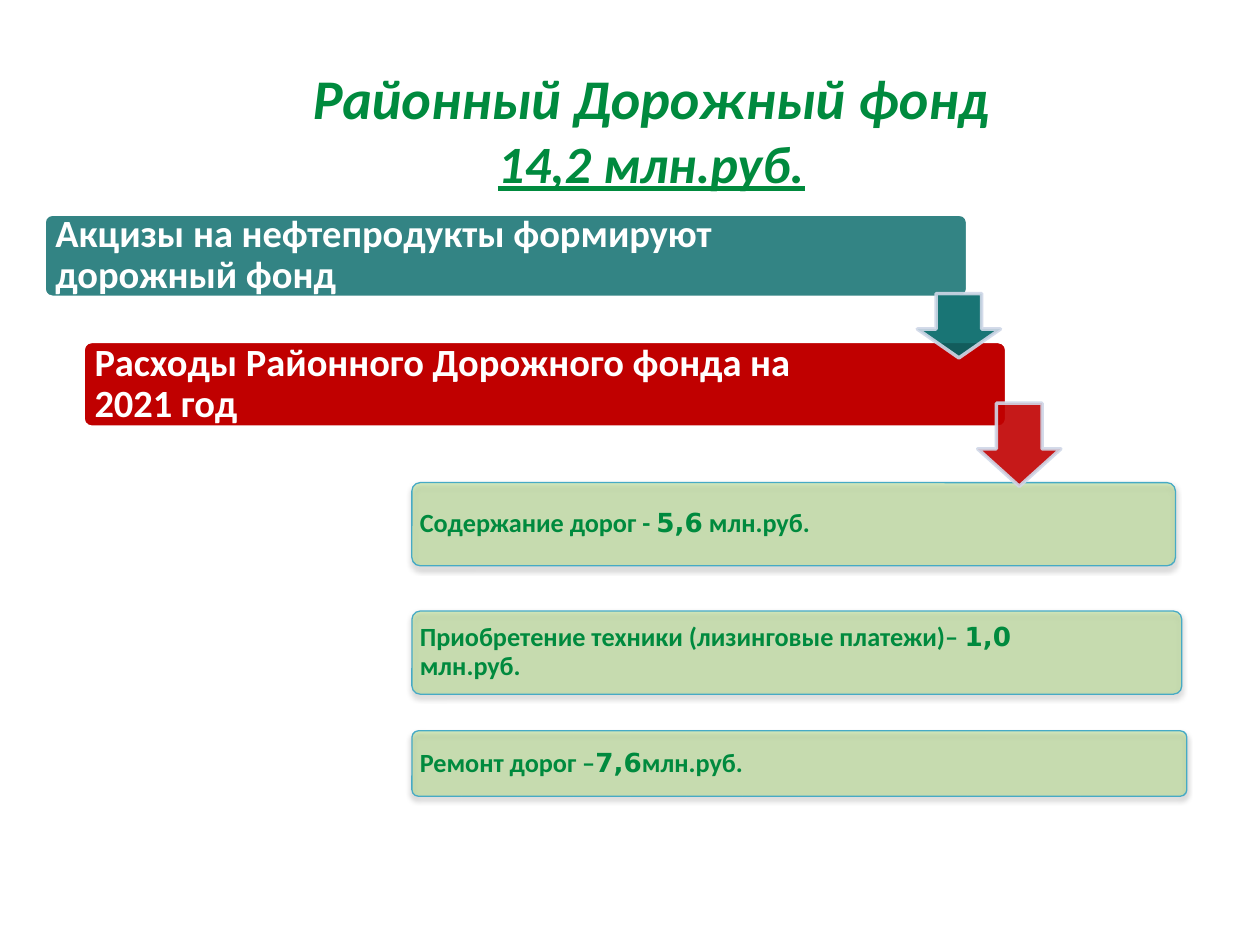
"""Build the slide on the district road fund and its spending."""
from lxml import etree
from pptx import Presentation
from pptx.dml.color import RGBColor
from pptx.enum.shapes import MSO_SHAPE
from pptx.enum.text import MSO_ANCHOR, PP_ALIGN
from pptx.oxml import parse_xml
from pptx.oxml.ns import nsdecls, qn
from pptx.util import Pt

ROUNDED = MSO_SHAPE.ROUNDED_RECTANGLE
ARROW = MSO_SHAPE.DOWN_ARROW
MIDDLE = MSO_ANCHOR.MIDDLE
LEFT, CENTER = PP_ALIGN.LEFT, PP_ALIGN.CENTER
COLORS = {
    "green": "008A3E", "teal": "006666", "red": "C00000", "lime": "92D050",
    "white": "FFFFFF", "blue": "46AAC5", "pale": "D0D8E8",
}
SHADOW = (
    f'<a:outerShdw {nsdecls("a")} blurRad="40000" dist="23000" dir="5400000" '
    'rotWithShape="0"><a:srgbClr val="000000"><a:alpha val="35000"/>'
    '</a:srgbClr></a:outerShdw>'
)

prs = Presentation()
prs.slide_width, prs.slide_height = Pt(720), Pt(540)
s = prs.slides.add_slide(prs.slide_layouts[6])


def add_text(x, y, w, h, lines, color, size=15, inset=4.5, align=LEFT,
             spacing=0.9, italic=False):
    tf = s.shapes.add_textbox(Pt(x), Pt(y), Pt(w), Pt(h)).text_frame
    tf.word_wrap, tf.vertical_anchor = True, MIDDLE
    tf.margin_left = tf.margin_right = Pt(inset)
    tf.margin_top = tf.margin_bottom = Pt(inset)
    for i, runs in enumerate(lines):
        p = tf.add_paragraph() if i else tf.paragraphs[0]
        p.alignment, p.line_spacing = align, spacing
        for text, font in runs:
            r = p.add_run()
            r.text = text
            r.font.name, r.font.size = font, Pt(size - 2 * i)
            r.font.bold, r.font.italic = True, italic
            r.font.underline = i > 0
            r.font.color.rgb = RGBColor.from_string(COLORS[color])


def add_block(kind, x, y, w, h, fill, line, width, adjust, alphas=(100, 100)):
    sp = s.shapes.add_shape(kind, Pt(x), Pt(y), Pt(w), Pt(h))
    sp.shadow.inherit = False
    for i, value in enumerate(adjust):
        sp.adjustments[i] = value
    sp.fill.solid()
    sp.fill.fore_color.rgb = RGBColor.from_string(COLORS[fill])
    sp.line.color.rgb = RGBColor.from_string(COLORS[line])
    sp.line.width = Pt(width)
    for color, alpha in zip(sp._element.spPr.iter(qn("a:srgbClr")), alphas):
        if alpha < 100:
            etree.SubElement(color, qn("a:alpha")).set("val", str(alpha * 1000))
    return sp


add_text(48.2, 31.7, 648, 84.2,
         [[("Районный Дорожный фонд", "Calibri")], [("14,2 млн.руб.", "Calibri")]],
         "green", size=32, align=CENTER, spacing=1, italic=True)

bars = [
    (25.2, 122.4, 47.5, 444.2, "teal", 80,
     "Акцизы на нефтепродукты формируют дорожный фонд"),
    (47.5, 195.1, 49, 440.6, "red", 100,
     "Расходы Районного Дорожного фонда на 2021 год"),
]
for x, y, h, text_w, fill, alpha, text in bars:
    add_block(ROUNDED, x, y, 527.8, h, fill, "white", 2, [0.1], (alpha, 100))
    add_text(x, y, text_w, h, [[(text, "Calibri")]], "white", size=22, inset=6.5)

expenses = [
    (275.8, 436.3, 47.5, 364.3, "Содержание дорог - ", "5,6", " млн.руб."),
    (349.2, 439.9, 47.5, 367.2, "Приобретение техники (лизинговые платежи)– ",
     "1,0", " млн.руб."),
    (417.6, 442.8, 37.4, 369.4, "Ремонт дорог –", "7,6", "млн.руб."),
]
for y, w, h, text_w, label, amount, unit in expenses:
    sp = add_block(ROUNDED, 235.4, y, w, h, "lime", "blue", 0.75, [0.1], (34, 100))
    sp._element.spPr.find(qn("a:effectLst")).append(parse_xml(SHADOW))
    runs = [(label, "Calibri"), (amount, "DejaVu Sans"), (unit, "Calibri")]
    add_text(235.4, y, text_w, h, [runs], "green")

for x, y, h, fill in [(524.2, 167.8, 36.7, "teal"), (558.7, 230.4, 47.5, "red")]:
    add_block(ARROW, x, y, 47.5, h, fill, "pale", 2, [0.55, 0.45], (90, 90))

prs.save("out.pptx")
